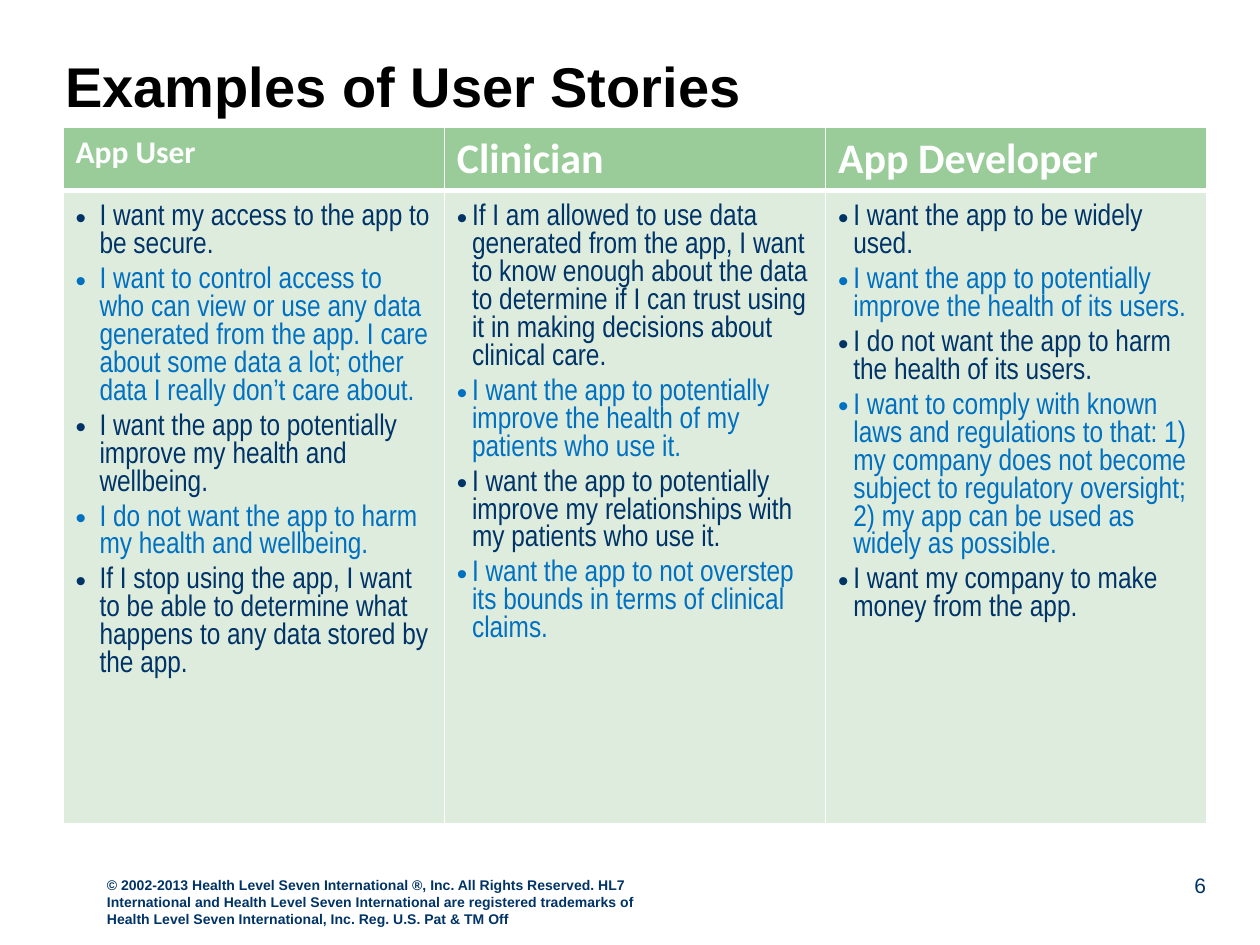
from lxml.etree import SubElement
from pptx import Presentation
from pptx.dml.color import RGBColor
from pptx.enum.text import MSO_ANCHOR, PP_ALIGN
from pptx.oxml.ns import qn
from pptx.util import Inches, Pt

NAVY, BLUE, WHITE = "003366", "0070C0", "FFFFFF"
HEADER_FILL, BODY_FILL = "99CC99", "DEECDE"

COLUMNS = [
    ("App User", 18, 0.19, [
        "I want my access to the app to be secure.",
        "I want to control access to who can view or use any data generated from the app. "
        "I care about some data a lot; other data I really don’t care about.",
        "I want the app to potentially improve my health and wellbeing.",
        "I do not want the app to harm my health and wellbeing.",
        "If I stop using the app, I want to be able to determine what happens to any data "
        "stored by the app.",
    ]),
    ("Clinician", 24, 0.12, [
        "If I am allowed to use data generated from the app, I want to know enough about the "
        "data to determine if I can trust using it in making decisions about clinical care.",
        "I want the app to potentially improve the health of my patients who use it.",
        "I want the app to potentially improve my relationships with my patients who use it.",
        "I want the app to not overstep its bounds in terms of clinical claims.",
    ]),
    ("App Developer", 24, 0.12, [
        "I want the app to be widely used.",
        "I want the app to potentially improve the health of its users.",
        "I do not want the app to harm the health of its users.",
        "I want to comply with known laws and regulations to that: 1) my company does not "
        "become subject to regulatory oversight; 2) my app can be used as widely as possible.",
        "I want my company to make money from the app.",
    ]),
]

COPYRIGHT = (
    "© 2002-2013 Health Level Seven International ®, Inc. All Rights Reserved. HL7 "
    "International and Health Level Seven International are registered trademarks of "
    "Health Level Seven International, Inc. Reg. U.S. Pat & TM Off"
)


def rgb(color):
    return RGBColor.from_string(color)


class Deck:
    def __init__(self, prs):
        self.font = "Arial"
        self.s = prs.slides.add_slide(prs.slide_layouts[6])

    def style(self, p, size, color, bold=False, font=None):
        for r in p.runs:
            r.font.name = font or self.font
            r.font.size = Pt(size)
            r.font.bold = bold
            r.font.color.rgb = rgb(color)

    def text(self, box, text, size, color, bold=False,
             align=PP_ALIGN.LEFT, anchor=MSO_ANCHOR.TOP, spacing=None):
        tf = self.s.shapes.add_textbox(*[Inches(v) for v in box]).text_frame
        tf.word_wrap = True
        tf.vertical_anchor = anchor
        tf.text = text
        p = tf.paragraphs[0]
        p.alignment = align
        p.line_spacing = spacing
        self.style(p, size, color, bold)

    def borders(self, cell, **widths):
        tcPr = cell._tc.get_or_add_tcPr()
        for side in "LRTB":
            ln = SubElement(tcPr, qn(f"a:ln{side}"), w=str(Pt(widths.get(side, 1))))
            SubElement(SubElement(ln, qn("a:solidFill")), qn("a:srgbClr"), val=WHITE)

    def fill(self, cell, color):
        cell.fill.solid()
        cell.fill.fore_color.rgb = rgb(color)

    def bullet(self, p, indent):
        pPr = p._p.get_or_add_pPr()
        pPr.set("marL", str(Inches(indent)))
        pPr.set("indent", str(-Inches(indent)))
        SubElement(pPr, qn("a:buFont"), typeface=self.font)
        SubElement(pPr, qn("a:buChar"), char="•")

    def stories(self, cell, items, indent):
        cell.margin_top = Inches(0.11)
        tf = cell.text_frame
        tf.text = "\n".join(items)
        for i, p in enumerate(tf.paragraphs):
            if i:
                p.space_before = Pt(4)
            self.bullet(p, indent)
            self.style(p, 17, BLUE if i % 2 else NAVY, font="Arial Narrow")

    def table(self, box, columns, heights):
        table = self.s.shapes.add_table(
            len(heights), len(columns), *[Inches(v) for v in box]).table
        for row, height in zip(table.rows, heights):
            row.height = Inches(height)
        for i, (name, size, indent, items) in enumerate(columns):
            head, body = table.cell(0, i), table.cell(1, i)
            self.borders(head, B=3)
            self.borders(body, T=3)
            self.fill(head, HEADER_FILL)
            self.fill(body, BODY_FILL)
            head.text_frame.text = name
            self.style(head.text_frame.paragraphs[0], size, WHITE, True, "Calibri")
            self.stories(body, items, indent)


def main():
    prs = Presentation()
    prs.slide_width, prs.slide_height = Inches(10), Inches(7.5)
    deck = Deck(prs)
    deck.text((9, 6.65, 0.67, 0.52), "6", 12, NAVY,
              align=PP_ALIGN.RIGHT, anchor=MSO_ANCHOR.BOTTOM)
    deck.text((0.75, 6.91, 4.58, 0.5), COPYRIGHT, 8, NAVY, True)
    deck.text((0.42, 0.25, 8.75, 0.75), "Examples of User Stories", 32, "000000", True,
              anchor=MSO_ANCHOR.BOTTOM, spacing=0.9)
    deck.table((0.5, 1.01, 9.08, 5.5), COLUMNS, (0.47, 5.03))
    prs.save("out.pptx")


if __name__ == "__main__":
    main()
